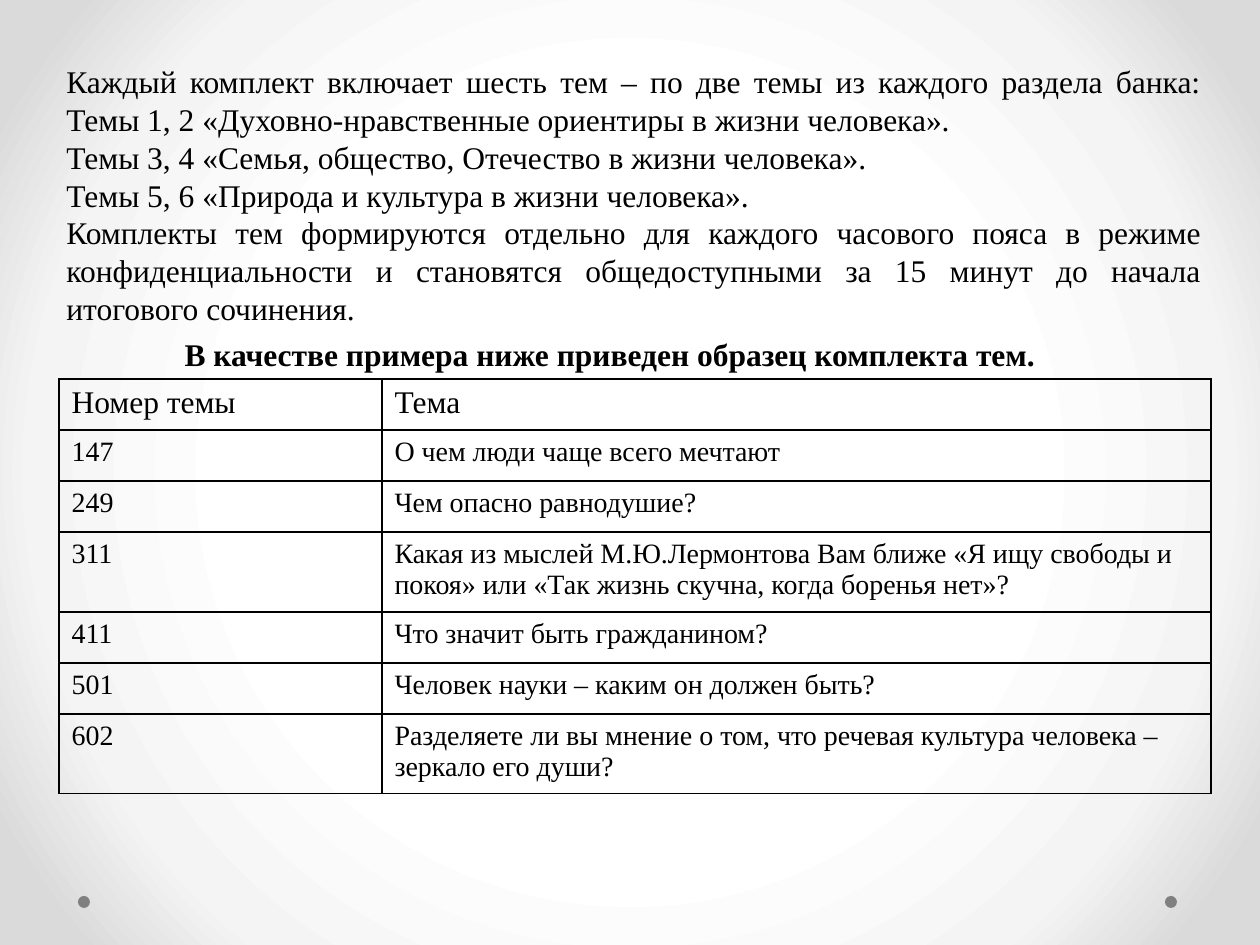
from lxml import etree
from pptx import Presentation
from pptx.dml.color import RGBColor
from pptx.enum.shapes import MSO_SHAPE
from pptx.enum.text import MSO_AUTO_SIZE, PP_ALIGN
from pptx.oxml import parse_xml
from pptx.oxml.ns import nsdecls, qn
from pptx.util import Pt

OVAL = MSO_SHAPE.OVAL
GROW = MSO_AUTO_SIZE.SHAPE_TO_FIT_TEXT
LEFT, MID, FULL = PP_ALIGN.LEFT, PP_ALIGN.CENTER, PP_ALIGN.JUSTIFY
HUES = {"ink": "000000", "dot": "808080", "core": "FFFFFF", "mist": "F4F4F4", "edge": "DADADA"}
GLOW = [(50, "core"), (76, "mist"), (92, "edge")]
FONT = "Times New Roman"

INTRO = [
    "Каждый комплект включает шесть тем – по две темы из каждого раздела банка: "
    "Темы 1, 2 «Духовно-нравственные ориентиры в жизни человека».",
    "Темы 3, 4 «Семья, общество, Отечество в жизни человека».",
    "Темы 5, 6 «Природа и культура в жизни человека».",
    "Комплекты тем формируются отдельно для каждого часового пояса в режиме "
    "конфиденциальности и становятся общедоступными за 15 минут до начала "
    "итогового сочинения.",
]
LEAD = "В качестве примера ниже приведен образец комплекта тем."
TOPICS = [
    ("Номер темы", "Тема"),
    ("147", "О чем люди чаще всего мечтают"),
    ("249", "Чем опасно равнодушие?"),
    ("311", "Какая из мыслей М.Ю.Лермонтова Вам ближе «Я ищу свободы и покоя» "
            "или «Так жизнь скучна, когда боренья нет»?"),
    ("411", "Что значит быть гражданином?"),
    ("501", "Человек науки – каким он должен быть?"),
    ("602", "Разделяете ли вы мнение о том, что речевая культура человека – "
            "зеркало его души?"),
]


def px(num):
    return round(num * 914400 / 126)


def tint(name):
    return RGBColor.from_string(HUES[name])


def write(frame, lines, size=18, bold=False, align=LEFT, hue="ink"):
    for i, line in enumerate(lines):
        para = frame.paragraphs[0] if i == 0 else frame.add_paragraph()
        para.alignment = align
        run = para.add_run()
        run.text = line
        font = run.font
        font.name, font.size, font.bold = FONT, Pt(size), bold
        font.color.rgb = tint(hue)


class Page:
    def __init__(self, slide):
        self.slide = slide
        self.shapes = slide.shapes

    def glow(self, stops):
        self.slide.background.fill.solid()
        back = self.slide.element.find(".//" + qn("p:bgPr"))
        marks = "".join(
            f'<a:gs pos="{pos * 1000}"><a:srgbClr val="{HUES[hue]}"/></a:gs>'
            for pos, hue in stops)
        grad = parse_xml(
            f'<a:gradFill {nsdecls("a")} rotWithShape="1"><a:gsLst>{marks}</a:gsLst>'
            '<a:path path="circle"><a:fillToRect l="50000" t="50000" r="50000" b="50000"/>'
            '</a:path></a:gradFill>')
        back.replace(back[0], grad)

    def dot(self, x, y, size):
        oval = self.shapes.add_shape(OVAL, px(x), px(y), px(size), px(size))
        oval.shadow.inherit = False
        oval.fill.solid()
        oval.fill.fore_color.rgb = tint("dot")
        oval.line.fill.background()

    def text(self, x, y, wide, high, lines, **style):
        frame = self.shapes.add_textbox(px(x), px(y), px(wide), px(high)).text_frame
        frame.word_wrap = True
        frame.auto_size = GROW
        write(frame, lines, **style)

    def edge(self, cell):
        props = cell._tc.get_or_add_tcPr()
        for i, side in enumerate(("lnL", "lnR", "lnT", "lnB")):
            line = etree.Element(qn("a:" + side), w=str(Pt(1)))
            fill = etree.SubElement(line, qn("a:solidFill"))
            etree.SubElement(fill, qn("a:srgbClr"), val=HUES["ink"])
            props.insert(i, line)

    def table(self, x, y, cols, rows, data):
        grid = self.shapes.add_table(
            len(rows), len(cols), px(x), px(y), px(sum(cols)), px(sum(rows))).table
        grid.first_row = grid.horz_banding = False
        for col, wide in zip(grid.columns, cols):
            col.width = px(wide)
        for i, (row, high) in enumerate(zip(grid.rows, rows)):
            row.height = px(high)
            for cell, word in zip(row.cells, data[i]):
                cell.fill.background()
                self.edge(cell)
                write(cell.text_frame, [word], size=16 if i else 18)


def main():
    deck = Presentation()
    deck.slide_width, deck.slide_height = px(1260), px(945)
    page = Page(deck.slides.add_slide(deck.slide_layouts[6]))
    page.glow(GLOW)
    for x in (1165, 78):
        page.dot(x, 896, 12)
    page.text(54, 56, 1160, 280, INTRO, align=FULL)
    page.text(94, 329, 1032, 50, [LEAD], bold=True, align=MID)
    rows = [79 if len(topic) > 50 else 51 for _, topic in TOPICS]
    page.table(59, 379, [323, 829], rows, TOPICS)
    deck.save("out.pptx")


if __name__ == "__main__":
    main()
